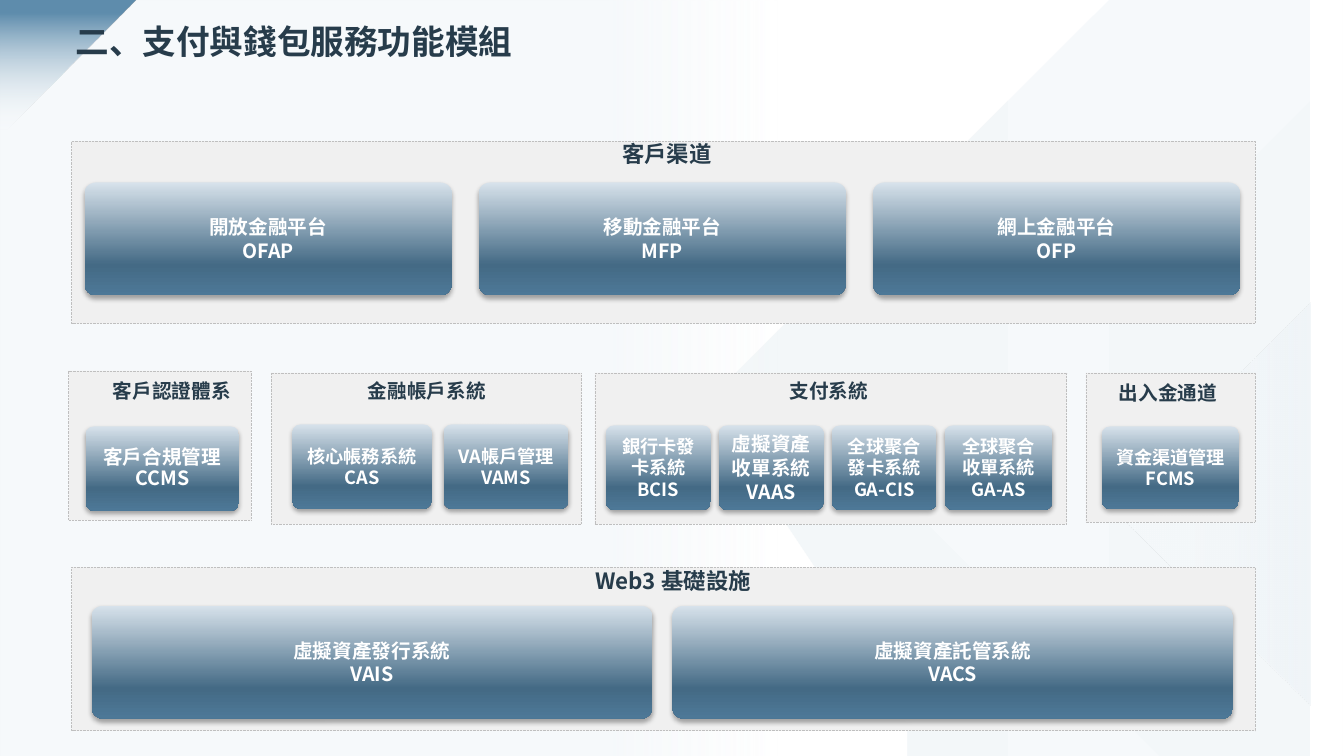
from lxml import etree
from pptx import Presentation, util as u
from pptx.dml.color import RGBColor
from pptx.enum import dml, shapes, text
from pptx.oxml import ns

WIDTH, HEIGHT = 13.33, 7.5
FACE = "Noto Sans CJK SC"
WHITE = RGBColor(0xFF, 0xFF, 0xFF)
INK = RGBColor(0x27, 0x3C, 0x4B)
PANEL = RGBColor(0xF0, 0xF0, 0xF0)
BORDER = RGBColor(0xBF, 0xBF, 0xBF)
BLACK = RGBColor(0, 0, 0)
MIST = RGBColor(0xF6, 0xF9, 0xFB)
HAZE = RGBColor(0xF3, 0xF7, 0xF9)
VEIL = RGBColor(0xEF, 0xF4, 0xF8)
CORNER = RGBColor(0x5F, 0x8D, 0xAD)

CARD_STOPS = [(0, RGBColor(0xD7, 0xE2, 0xEB), 100), (73, RGBColor(0x44, 0x6A, 0x85), 100),
              (100, RGBColor(0x4D, 0x78, 0x97), 100)]
PLAIN_STOPS = [(0, MIST, 100), (100, HAZE, 100)]
FACETS = [
    ([(11.05, 0), (WIDTH, 0), (WIDTH, HEIGHT), (8.74, HEIGHT), (9.48, 6.76), (6.89, 4.16)],
     PLAIN_STOPS, 180),
    ([(12.77, 1.26), (WIDTH, 1.26), (WIDTH, HEIGHT), (12.33, HEIGHT), (9.43, 4.6)],
     PLAIN_STOPS, 0),
    ([(WIDTH, 3.21), (WIDTH, 7.11), (11.38, 5.16)],
     [(0, MIST, 100), (57, HAZE, 100), (100, VEIL, 70)], 0),
]
WASHES = [
    (shapes.MSO_SHAPE.RECTANGLE, (0, 0, WIDTH, HEIGHT), 0, [(45, MIST, 100), (58, MIST, 0)]),
    (shapes.MSO_SHAPE.RIGHT_TRIANGLE, (0, 0, 1.35, 1.35), 90, [(10, CORNER, 100), (95, MIST, 0)]),
]

TITLE = "二、支付與錢包服務功能模組"
WIDE = {"size": 16, "spacing": 1.1, "inset": 0}
NARROW = {"size": 14, "spacing": 0.7, "inset": 0.03}
PANELS = [
    {"box": (0.71, 1.4, 11.74, 1.81), "name": "客戶渠道", "label": (5.3, 1.36, 2.63, 0.29),
     "style": WIDE, "start": (0.84, 1.81), "height": 1.12, "gap": 0.27,
     "cards": [(3.64, 14, ["開放金融平台", "OFAP"]), (3.64, 14, ["移動金融平台", "MFP"]),
               (3.64, 14, ["網上金融平台", "OFP"])]},
    {"box": (0.68, 3.68, 1.81, 1.48), "name": "客戶認證體系", "label": (0.93, 3.79, 1.55, 0.28),
     "style": NARROW, "start": (0.85, 4.23), "height": 0.84, "gap": 0, "spacing": 0.9,
     "cards": [(1.52, 14, ["客戶合規管理CCMS"])]},
    {"box": (2.69, 3.7, 3.08, 1.5), "name": "金融帳戶系統", "label": (2.97, 3.79, 2.53, 0.32),
     "style": NARROW, "start": (2.9, 4.21), "height": 0.84, "gap": 0.12,
     "cards": [(1.38, 13, ["核心帳務系統", "CAS"]), (1.24, 13, ["VA帳戶管理", "VAMS"])]},
    {"box": (5.9, 3.7, 4.68, 1.5), "name": "支付系統", "label": (6.78, 3.79, 2.88, 0.32),
     "style": NARROW, "start": (6.01, 4.22), "height": 0.84, "gap": 0.08,
     "cards": [(1.04, 13, ["銀行卡發卡系統", "BCIS"]), (1.04, 14, ["虛擬資產收單系統", "VAAS"]),
               (1.04, 13, ["全球聚合發卡系統", "GA-CIS"]), (1.07, 13, ["全球聚合收單系統", "GA-AS"])]},
    {"box": (10.77, 3.7, 1.68, 1.48), "name": "出入金通道", "label": (10.72, 3.81, 1.73, 0.28),
     "style": NARROW, "start": (10.93, 4.23), "height": 0.82, "gap": 0,
     "cards": [(1.36, 13, ["資金渠道管理", "FCMS"])]},
    {"box": (0.71, 5.63, 11.74, 1.62), "name": "Web3 基礎設施", "label": (4.75, 5.6, 3.85, 0.29),
     "style": WIDE, "start": (0.91, 6.01), "height": 1.12, "gap": 0.2,
     "cards": [(5.56, 14, ["虛擬資產發行系統", "VAIS"]), (5.56, 14, ["虛擬資產託管系統", "VACS"])]},
]


def apply(target, values):
    """Set each named attribute on the target."""
    for key, value in values.items():
        setattr(target, key, value)


def node(parent, tag, **attributes):
    """Append a drawing element to its parent."""
    return etree.SubElement(parent, ns.qn(tag), {key: str(value) for key, value in attributes.items()})


def tint(parent, colour, opacity):
    """Append a colour with its opacity in percent."""
    node(node(parent, "a:srgbClr", val=colour), "a:alpha", val=opacity * 1000)


def shade(shape, stops, angle):
    """Fill a borderless shape with a linear gradient."""
    shape.shadow.inherit = False
    shape.line.fill.background()
    shape.fill.background()
    blank = shape._element.spPr.find(ns.qn("a:noFill"))
    gradient = etree.Element(ns.qn("a:gradFill"), rotWithShape="1")
    ramp = node(gradient, "a:gsLst")
    for position, colour, opacity in stops:
        tint(node(ramp, "a:gs", pos=position * 1000), colour, opacity)
    node(gradient, "a:lin", ang=angle * 60000, scaled=0)
    blank.getparent().replace(blank, gradient)


def add_preset(page, preset, box):
    """Add a preset shape at a box in inches."""
    return page.shapes.add_shape(preset, *map(u.Inches, box))


def write(frame, lines, size, colour, align, spacing=1.0):
    """Write one paragraph for each line."""
    frame.word_wrap = True
    for index, line in enumerate(lines):
        para = frame.add_paragraph() if index else frame.paragraphs[0]
        apply(para, {"alignment": align, "line_spacing": spacing})
        span = para.add_run()
        span.text = line
        apply(span.font, {"size": u.Pt(size), "bold": True, "name": FACE})
        span.font.color.rgb = colour
        node(span.font._element, "a:ea", typeface=FACE)


def add_label(page, box, name, size, spacing, inset, align):
    """Add a heading in a text box."""
    frame = page.shapes.add_textbox(*map(u.Inches, box)).text_frame
    apply(frame, {"margin_top": u.Inches(inset), "margin_bottom": 0})
    write(frame, [name], size, INK, align, spacing)


def add_card(page, box, size, lines, spacing):
    """Add a rounded gradient card with a soft shadow."""
    card = add_preset(page, shapes.MSO_SHAPE.ROUNDED_RECTANGLE, box)
    card.adjustments[0] = 0.1
    shade(card, CARD_STOPS, 90)
    effects = card._element.spPr.find(ns.qn("a:effectLst"))
    shadow = node(effects, "a:outerShdw", blurRad=u.Pt(3.5), dist=u.Pt(2.2),
                  dir=90 * 60000, algn="t", rotWithShape=0)
    tint(shadow, BLACK, 32)
    card.text_frame.vertical_anchor = text.MSO_ANCHOR.MIDDLE
    write(card.text_frame, lines, size, WHITE, text.PP_ALIGN.CENTER, spacing)


def add_panel(page, panel):
    """Add a dotted panel, its heading and its row of cards."""
    frame = add_preset(page, shapes.MSO_SHAPE.RECTANGLE, panel["box"])
    frame.shadow.inherit = False
    frame.fill.solid()
    frame.fill.fore_color.rgb = PANEL
    frame.line.color.rgb = BORDER
    apply(frame.line, {"width": u.Pt(0.5), "dash_style": dml.MSO_LINE.ROUND_DOT})
    add_label(page, panel["label"], panel["name"], **panel["style"], align=text.PP_ALIGN.CENTER)
    left, top = panel["start"]
    for width, size, lines in panel["cards"]:
        add_card(page, (left, top, width, panel["height"]), size, lines, panel.get("spacing", 1.0))
        left += width + panel["gap"]


def add_backdrop(page):
    """Add the pale facets and washes behind the content."""
    for points, stops, angle in FACETS:
        builder = page.shapes.build_freeform(*points[0], scale=u.Inches(1))
        builder.add_line_segments(points[1:], close=True)
        shade(builder.convert_to_shape(), stops, angle)
    for preset, box, turn, stops in WASHES:
        wash = add_preset(page, preset, box)
        wash.rotation = turn
        shade(wash, stops, 0)


def main():
    """Build the slide and save it."""
    deck = Presentation()
    apply(deck, {"slide_width": u.Inches(WIDTH), "slide_height": u.Inches(HEIGHT)})
    page = deck.slides.add_slide(deck.slide_layouts[6])
    add_backdrop(page)
    add_label(page, (0.65, 0.25, 12.25, 0.51), TITLE, 24, 0.9, 0, text.PP_ALIGN.LEFT)
    for panel in PANELS:
        add_panel(page, panel)
    deck.save("out.pptx")


if __name__ == "__main__":
    main()
